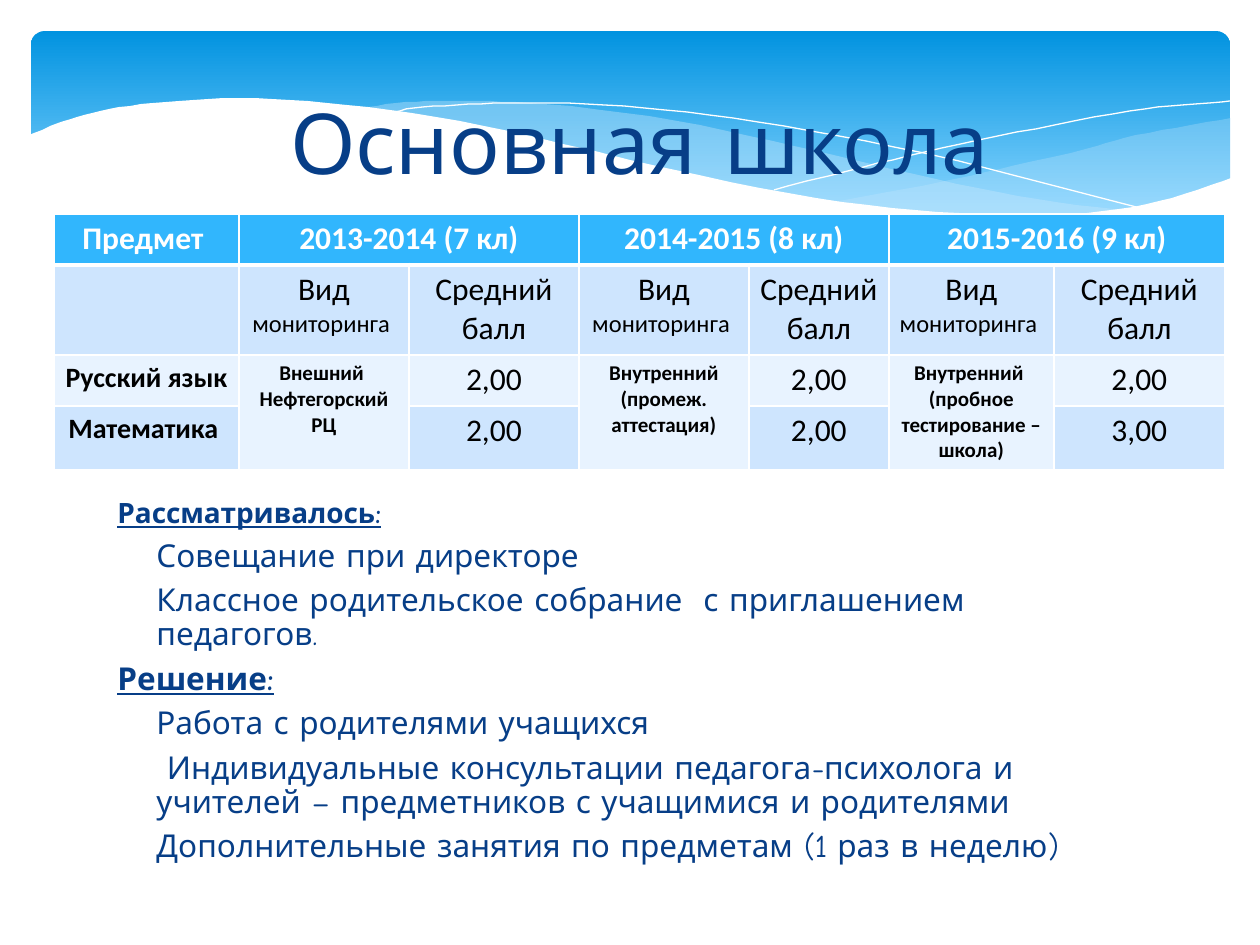
from lxml.etree import SubElement
from pptx import Presentation
from pptx.dml.color import RGBColor
from pptx.enum.shapes import MSO_SHAPE
from pptx.enum.text import MSO_ANCHOR, PP_ALIGN
from pptx.oxml.ns import qn
from pptx.util import Emu, Pt

SCALE = 914400 / 126
COLORS = {
    "top": "0293E0", "low": "83D3FE", "wave": "C6E7FC", "white": "FFFFFF",
    "navy": "073E87", "head": "31B6FD", "dark": "CEE5FE", "pale": "E8F3FF",
    "black": "000000",
}
HAND, PLAIN = "Comic Neue", "Calibri"

# Each wave is a list of curves that meet end to end.
RIGHT = [
    [(1231, 118), (1176, 128), (1124, 138), (1086, 149), (1016, 165),
     (950, 180), (834, 202)],
    [(834, 202), (872, 207), (924, 213), (985, 217), (1053, 217),
     (1111, 212), (1162, 202), (1198, 192), (1231, 179)],
]
MIDDLE = [
    [(1126, 210), (1056, 202), (978, 188), (891, 169), (794, 146),
     (718, 129), (649, 116), (586, 108), (529, 103), (479, 101),
     (435, 101), (396, 103), (362, 108)],
    [(362, 108), (407, 113), (457, 122), (510, 134), (567, 146),
     (668, 170), (759, 189), (839, 203), (911, 212), (975, 217),
     (1032, 218), (1082, 215), (1126, 210)],
]
FALL = [
    [(391, 113), (414, 108), (457, 105), (507, 103), (568, 103),
     (644, 108), (733, 118), (839, 136), (959, 161), (1144, 209)],
]
RISE = [
    [(774, 190), (848, 171), (908, 156), (979, 140), (1055, 125),
     (1130, 111), (1183, 105), (1230, 101)],
]
FRONT = [
    [(1231, 178), (1184, 194), (1133, 207), (1071, 214), (999, 215),
     (915, 210), (816, 198), (699, 175), (563, 144), (460, 121),
     (368, 107), (290, 100), (223, 98), (166, 102), (119, 107),
     (84, 115), (58, 123), (29, 135)],
    [(29, 282), (1231, 282)],
]

NOTES = [
    ("Рассматривалось:", 16, True),
    ("Совещание при директоре", 18, False),
    ("Классное родительское собрание  с приглашением педагогов.", 18, False),
    ("Решение:", 18, True),
    ("Работа с родителями учащихся", 18, False),
    (" Индивидуальные консультации педагога-психолога и учителей – "
     "предметников с учащимися и родителями", 18, False),
    ("Дополнительные занятия по предметам (1 раз в неделю)", 18, False),
]

COLS = [185, 170, 170, 170, 140, 165, 171]
ROWS = [51, 90, 51, 64]
YEARS = ["2013-2014 (7 кл)", "2014-2015 (8 кл)", "2015-2016 (9 кл)"]
KINDS = [
    ["Внешний ", "Нефтегорский РЦ"],
    ["Внутренний", "(промеж. аттестация)"],
    ["Внутренний ", "(пробное тестирование –школа)"],
]
MARKS = {
    "Русский язык": ["2,00", "2,00", "2,00"],
    "Математика ": ["2,00", "2,00", "3,00"],
}


def px(n):
    return Emu(round(n * SCALE))


def rgb(name):
    return RGBColor.from_string(COLORS[name])


def style(run, size, color, font, bold=False):
    run.font.size = Pt(size)
    run.font.name = font
    run.font.bold = bold
    run.font.color.rgb = rgb(color)


def smooth(pts, steps=4):
    """Return points on a Catmull-Rom curve through pts."""
    if len(pts) < 3:
        return pts
    ends = [pts[0], *pts, pts[-1]]
    out = [pts[0]]
    for a, b, c, d in zip(ends, ends[1:], ends[2:], ends[3:]):
        for k in range(1, steps + 1):
            t = k / steps
            out.append(tuple(
                (2 * q + (r - p) * t + (2 * p - 5 * q + 4 * r - s) * t ** 2
                 + (3 * q - p - 3 * r + s) * t ** 3) / 2
                for p, q, r, s in zip(a, b, c, d)))
    return out


def add_curve(slide, curves, fill=None, alpha=100):
    """Draw a filled wave, or a hairline when no fill is given."""
    pts = [p for curve in curves for p in smooth(curve)]
    pen = slide.shapes.build_freeform(*pts[0], scale=SCALE)
    pen.add_line_segments(pts[1:], close=fill is not None)
    shape = pen.convert_to_shape()
    shape.shadow.inherit = False
    if fill is None:
        shape.fill.background()
        shape.line.color.rgb = rgb("white")
        shape.line.width = Pt(0)
        return
    shape.fill.solid()
    shape.fill.fore_color.rgb = rgb(fill)
    shape.line.fill.background()
    if alpha < 100:
        tone = shape.fill._xPr.find(qn("a:solidFill"))[0]
        SubElement(tone, qn("a:alpha"), val=str(alpha * 1000))


def add_banner(slide):
    shape = slide.shapes.add_shape(
        MSO_SHAPE.ROUNDED_RECTANGLE, px(31), px(31), px(1199), px(197))
    shape.adjustments[0] = 0.07
    shape.shadow.inherit = False
    shape.line.fill.background()
    shape.fill.gradient()
    shape.fill.gradient_angle = 270
    stops = shape.fill.gradient_stops
    for stop, name, place in zip(stops, ("top", "low"), (0, 0.9)):
        stop.color.rgb = rgb(name)
        stop.position = place


def add_box(slide, left, top, width, height):
    box = slide.shapes.add_textbox(px(left), px(top), px(width), px(height))
    box.text_frame.word_wrap = True
    return box.text_frame


def add_title(slide):
    frame = add_box(slide, 63, 38, 1153, 160)
    frame.vertical_anchor = MSO_ANCHOR.BOTTOM
    frame.text = "Основная школа"
    para = frame.paragraphs[0]
    para.alignment = PP_ALIGN.CENTER
    style(para.runs[0], 48, "navy", HAND)


def add_notes(slide):
    frame = add_box(slide, 105, 493, 992, 407)
    frame.text = "\n".join(text for text, _, _ in NOTES)
    for para, (_, size, head) in zip(frame.paragraphs, NOTES):
        para.space_after = Pt(6)
        para.line_spacing = 0.9
        style(para.runs[0], size, "navy", HAND, head)
        para.runs[0].font.underline = head
        if not head:
            para._p.get_or_add_pPr().set("marL", str(px(39)))


def set_edges(cell, low):
    """Give a cell white borders, with the bottom one low points wide."""
    props = cell._tc.get_or_add_tcPr()
    for k, (side, wide) in enumerate(
            [("lnL", 1), ("lnR", 1), ("lnT", 1), ("lnB", low)]):
        line = SubElement(props, qn("a:" + side), w=str(Pt(wide)))
        fill = SubElement(line, qn("a:solidFill"))
        SubElement(fill, qn("a:srgbClr"), val=COLORS["white"])
        props.insert(k, line)


def fill_cell(cell, lines, size, color="black", bold=False):
    cell.text_frame.text = "\n".join(lines)
    for para in cell.text_frame.paragraphs:
        para.alignment = PP_ALIGN.CENTER
        for run in para.runs:
            style(run, size, color, PLAIN, bold)


def add_grid(slide):
    grid = slide.shapes.add_table(
        len(ROWS), len(COLS), px(54), px(214), px(sum(COLS)),
        px(sum(ROWS))).table
    grid.horz_banding = False
    for col, width in zip(grid.columns, COLS):
        col.width = px(width)
    for r, (row, high) in enumerate(zip(grid.rows, ROWS)):
        row.height = px(high)
        for cell in row.cells:
            cell.margin_left = cell.margin_right = px(9)
            cell.margin_top = cell.margin_bottom = px(6)
            cell.fill.solid()
            cell.fill.fore_color.rgb = rgb(("head", "dark", "pale", "dark")[r])
            set_edges(cell, 1 if r else 3)

    fill_cell(grid.cell(0, 0), ["Предмет "], 18, "white", True)
    for k, (year, kind) in enumerate(zip(YEARS, KINDS)):
        c = 1 + 2 * k
        grid.cell(0, c).merge(grid.cell(0, c + 1))
        fill_cell(grid.cell(0, c), [year], 18, "white", True)
        fill_cell(grid.cell(1, c), ["Вид "], 18)
        run = grid.cell(1, c).text_frame.paragraphs[0].add_run()
        run.text = "мониторинга "
        style(run, 14, "black", PLAIN)
        fill_cell(grid.cell(1, c + 1), ["Средний балл"], 18)
        grid.cell(2, c).merge(grid.cell(3, c))
        fill_cell(grid.cell(2, c), kind, 12, bold=True)
    for r, (name, marks) in enumerate(MARKS.items(), 2):
        fill_cell(grid.cell(r, 0), [name], 16, bold=True)
        for k, mark in enumerate(marks):
            fill_cell(grid.cell(r, 2 + 2 * k), [mark], 18)


def main():
    deck = Presentation()
    deck.slide_width, deck.slide_height = px(1260), px(945)
    slide = deck.slides.add_slide(deck.slide_layouts[6])
    add_banner(slide)
    add_curve(slide, RIGHT, "wave", 29)
    add_curve(slide, MIDDLE, "wave", 40)
    add_curve(slide, FALL)
    add_curve(slide, RISE)
    add_curve(slide, FRONT, "white")
    add_notes(slide)
    add_title(slide)
    add_grid(slide)
    deck.save("out.pptx")


if __name__ == "__main__":
    main()
